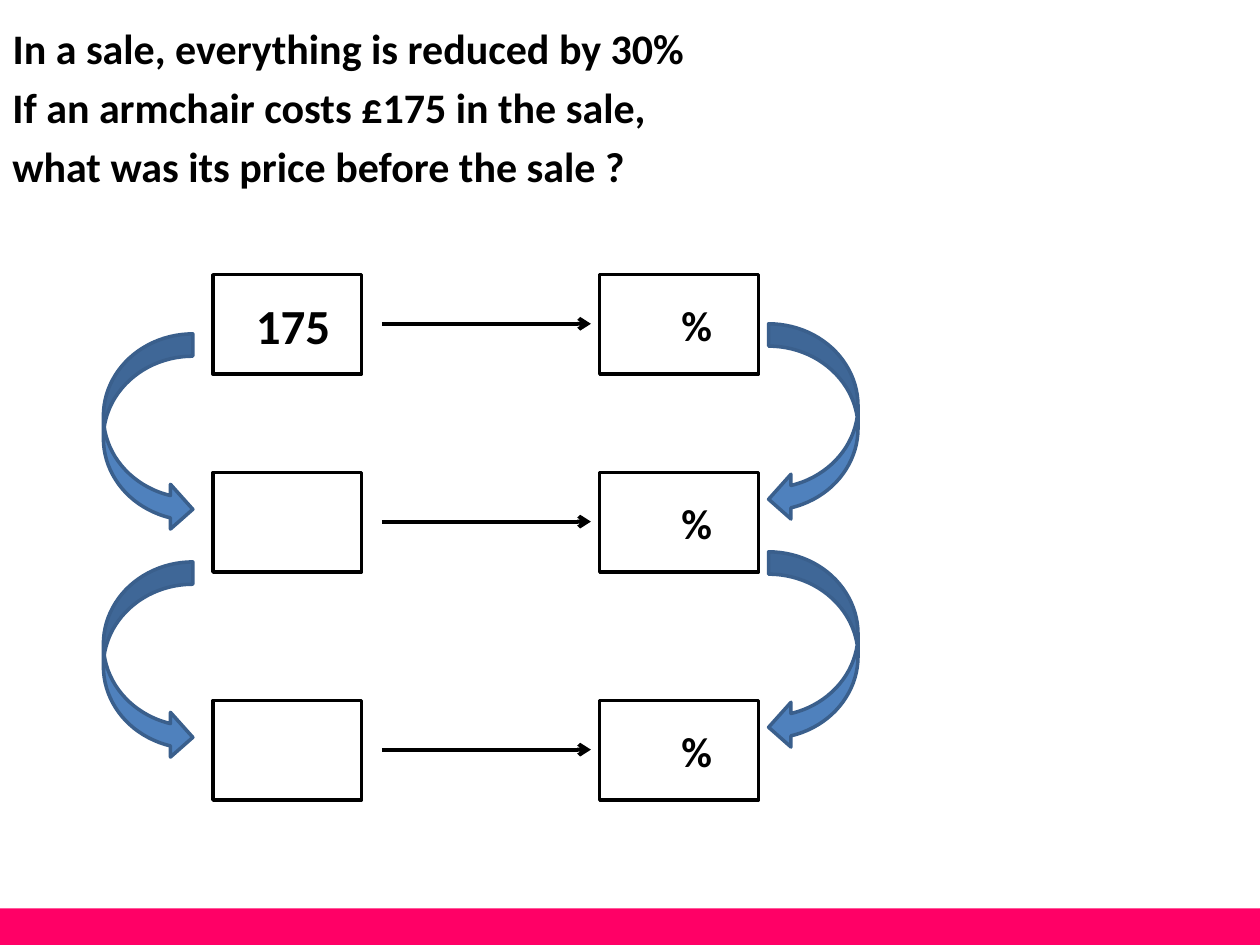
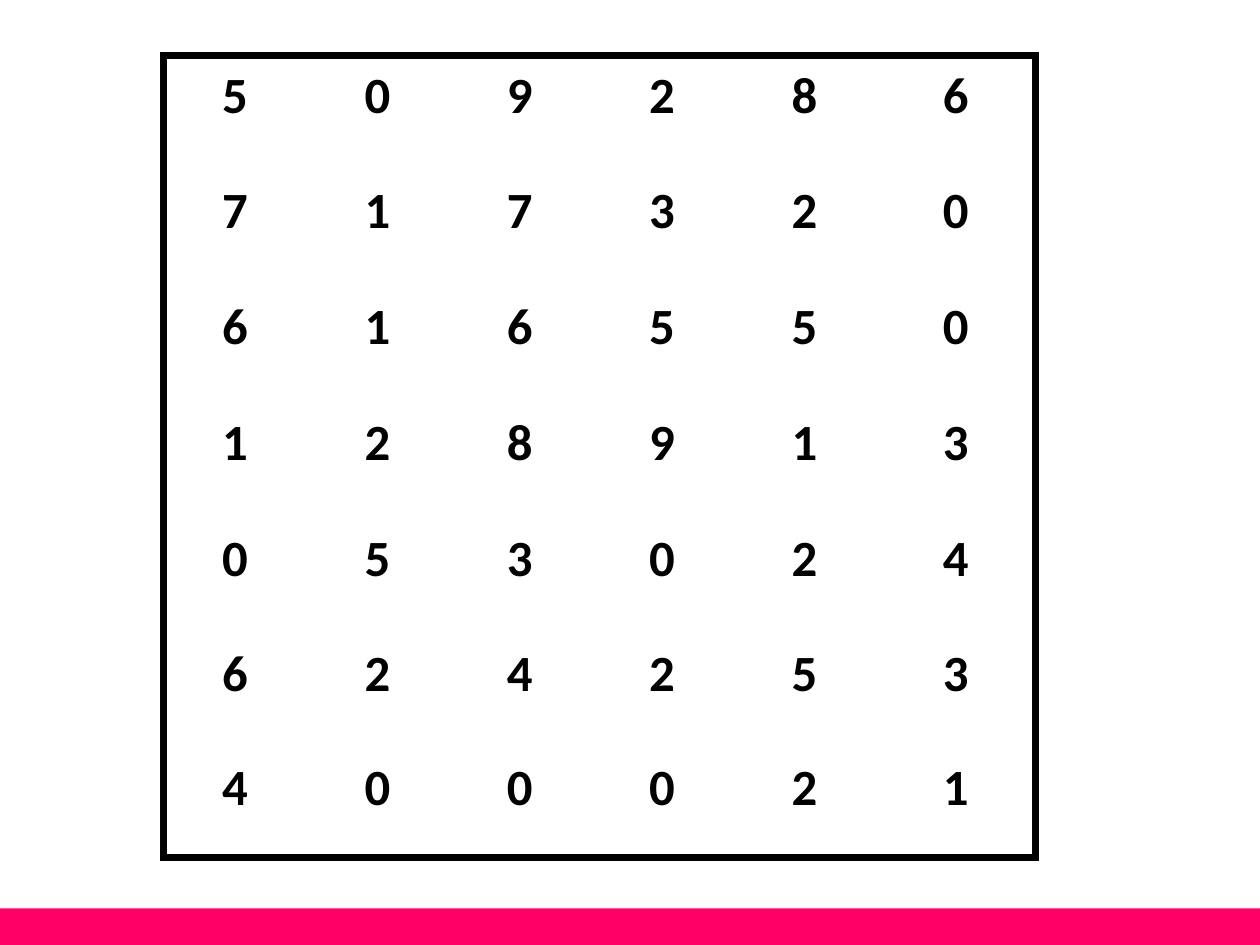
from dataclasses import dataclass
from lxml import etree
from pptx import Presentation
from pptx import util as u
from pptx.dml import color
from pptx.enum import shapes, text
from pptx.oxml import ns

RGB = color.RGBColor.from_string
KIND = shapes.MSO_SHAPE


@dataclass(frozen=True)
class Theme:
    font: str = "Calibri"
    ink: str = "000000"
    paper: str = "FFFFFF"
    band: str = "FF0066"
    blue: str = "4F81BD"
    edge: str = "3A5F8C"
    body: int = 24
    price: int = 28
    digit: int = 29
    line: float = 2
    arrow: float = 2.25
    frame: float = 4.5


def place(*nums):
    return [u.Inches(n) for n in nums]


class Deck:
    def __init__(self, theme):
        self.theme = theme
        self.prs = Presentation()
        self.prs.slide_width, self.prs.slide_height = place(10, 7.5)

    def page(self, layout):
        self.slide = self.prs.slides.add_slide(self.prs.slide_layouts.get_by_name(layout))
        self.shape(KIND.RECTANGLE, (0, 7.21, 10, 0.29), self.theme.band)

    def label(self, para, words, size, align):
        para.alignment = align
        run = para.add_run()
        run.text = words
        run.font.name = self.theme.font
        run.font.size = u.Pt(size)
        run.font.bold = True
        run.font.color.rgb = RGB(self.theme.ink)

    def fit(self, item, box, words):
        item.left, item.top, item.width, item.height = place(*box)
        frame = item.text_frame
        frame.word_wrap = True
        frame.auto_size = text.MSO_AUTO_SIZE.NONE
        frame.vertical_anchor = text.MSO_ANCHOR.TOP
        self.label(frame.paragraphs[0], words, self.theme.body, text.PP_ALIGN.LEFT)

    def title(self, box, words):
        self.fit(self.slide.shapes.title, box, words)

    def note(self, box, words):
        self.fit(self.slide.shapes.add_textbox(*place(*box)), box, words)

    def shape(self, kind, box, fill, line=None):
        item = self.slide.shapes.add_shape(kind, *place(*box))
        item.shadow.inherit = False
        item.fill.solid()
        item.fill.fore_color.rgb = RGB(fill)
        if line:
            item.line.color.rgb = RGB(line)
            item.line.width = u.Pt(self.theme.line)
        else:
            item.line.fill.background()
        return item

    def box(self, area, words="", size=0, inset=0.1):
        item = self.shape(KIND.RECTANGLE, area, self.theme.paper, self.theme.ink)
        if words:
            frame = item.text_frame
            frame.margin_left = u.Inches(inset)
            frame.vertical_anchor = text.MSO_ANCHOR.MIDDLE
            self.label(frame.paragraphs[0], words, size, text.PP_ALIGN.CENTER)

    def curve(self, area, angle, flip=False):
        item = self.shape(KIND.CURVED_DOWN_ARROW, area, self.theme.blue, self.theme.edge)
        item.rotation = angle
        if flip:
            item.element.spPr.find(ns.qn("a:xfrm")).set("flipH", "1")

    def arrow(self, left, right, y):
        item = self.slide.shapes.add_connector(
            shapes.MSO_CONNECTOR.STRAIGHT, *place(left, y, right, y))
        item.line.color.rgb = RGB(self.theme.ink)
        item.line.width = u.Pt(self.theme.arrow)
        props = item.element.spPr
        etree.SubElement(props.find(ns.qn("a:ln")), ns.qn("a:tailEnd"), type="arrow")
        etree.SubElement(props, ns.qn("a:effectLst"))

    def border(self, cell, side, shown):
        props = cell._tc.get_or_add_tcPr()
        line = etree.SubElement(props, ns.qn("a:ln" + side))
        if shown:
            line.set("w", str(u.Pt(self.theme.frame)))
            fill = etree.SubElement(line, ns.qn("a:solidFill"))
            etree.SubElement(fill, ns.qn("a:srgbClr"), val=self.theme.ink)
        else:
            etree.SubElement(line, ns.qn("a:noFill"))

    def table(self, left, top, wide, high, rows):
        area = place(left, top, sum(wide), sum(high))
        grid = self.slide.shapes.add_table(len(high), len(wide), *area).table
        grid.first_row = grid.horz_banding = False
        for col, size in zip(grid.columns, wide):
            col.width = u.Inches(size)
        for r, digits in enumerate(rows):
            grid.rows[r].height = u.Inches(high[r])
            for c, digit in enumerate(digits):
                cell = grid.cell(r, c)
                edges = {"L": c == 0, "R": c == len(wide) - 1,
                         "T": r == 0, "B": r == len(high) - 1}
                for side, shown in edges.items():
                    self.border(cell, side, shown)
                cell.fill.background()
                cell.margin_left = cell.margin_right = u.Inches(0.06)
                cell.margin_top = cell.margin_bottom = 0
                para = cell.text_frame.paragraphs[0]
                para.line_spacing = 1.15
                self.label(para, digit, self.theme.digit, text.PP_ALIGN.CENTER)


def sale(deck):
    deck.page("Title Only")
    deck.title((0, 0.13, 5.87, 0.5), "In a sale, everything is reduced by 30%")
    deck.note((0, 0.6, 5.6, 0.5), "If an armchair costs £175 in the sale,")
    deck.note((0, 1.07, 5.6, 0.5), "what was its price before the sale ?")
    tops = (2.18, 3.75, 5.56)
    for top, price in zip(tops, ("175", "", "")):
        deck.arrow(3.03, 4.69, top + 0.39)
        deck.box((4.76, top, 1.26, 0.79), "%", deck.theme.body, 0.38)
        deck.box((1.69, top, 1.18, 0.79), price, deck.theme.price, 0.19)
    for top in tops[1:]:
        deck.curve((5.67, top - 0.75, 1.57, 0.71), 90)
        deck.curve((0.39, top - 0.67, 1.57, 0.71), 270, True)


def digits(deck):
    deck.page("Blank")
    rows = ("509286", "717320", "616550", "128913", "053024", "624253", "400021")
    wide = [1.13] * 5 + [1.27]
    high = [0.92] * 4 + [0.91] * 2 + [0.87]
    deck.table(1.3, 0.44, wide, high, rows)


def main():
    deck = Deck(Theme())
    sale(deck)
    digits(deck)
    deck.prs.save("out.pptx")


if __name__ == "__main__":
    main()
